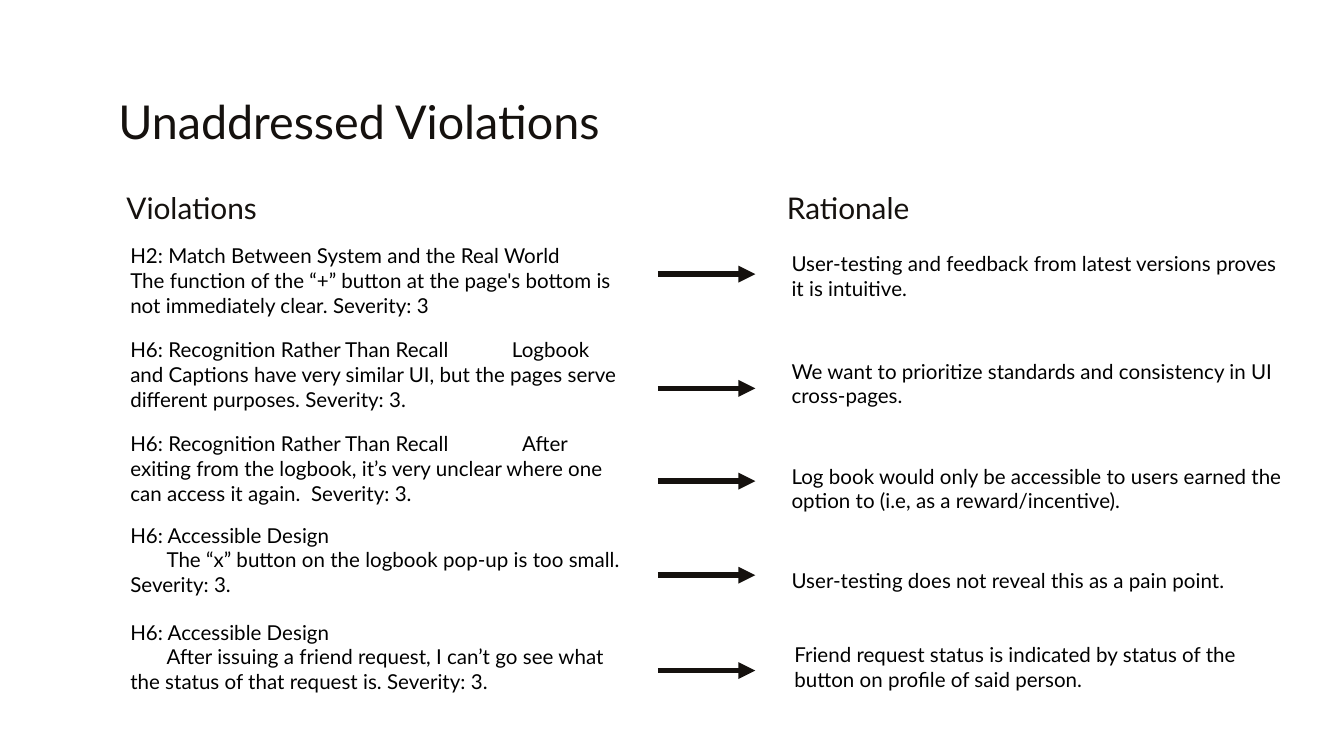
from dataclasses import dataclass

from lxml.etree import SubElement as Sub
from pptx import Presentation
from pptx.dml.color import RGBColor
from pptx.enum.shapes import MSO_CONNECTOR as Link
from pptx.enum.text import MSO_ANCHOR as Anchor, MSO_AUTO_SIZE as Fit, PP_ALIGN as Align
from pptx.oxml.ns import qn
from pptx.util import Emu, Pt

SCALE = 4572
FONT = "Lato"
DARK = "15110E"
BLACK = "000000"
INSET = 20
INDENT = 72


@dataclass
class Box:
    left: int
    top: int
    width: int
    height: int


@dataclass
class Row:
    top: int
    issue: str
    stop: int
    mid: int
    reply: str
    place: Box


ROWS = [
    Row(342, "H2: Match Between System and the Real World\vThe function of the “+” button at the page's bottom is not immediately clear. Severity: 3",
        0, 408, "User-testing and feedback from latest versions proves it is intuitive.", Box(1106, 354, 834, 128)),
    Row(482, "H6: Recognition Rather Than Recall\tLogbook\vand Captions have very similar UI, but the pages serve different purposes. Severity: 3.",
        568, 578, "We want to prioritize standards and consistency in UI cross-pages.", Box(1106, 514, 834, 128)),
    Row(622, "H6: Recognition Rather Than Recall\tAfter exiting from the logbook, it’s very unclear where one can access it again.  Severity: 3.",
        583, 716, "Log book would only be accessible to users earned the option to (i.e, as a reward/incentive).", Box(1106, 670, 834, 128)),
    Row(758, "H6: Accessible Design\v\tThe “x” button on the logbook pop-up is too small. Severity: 3.",
        54, 856, "User-testing does not reveal this as a pain point.", Box(1106, 826, 864, 128)),
    Row(902, "H6: Accessible Design\v\tAfter issuing a friend request, I can’t go see what the status of that request is. Severity: 3.",
        54, 998, "Friend request status is indicated by status of the button on profile of said person.", Box(1110, 936, 824, 128)),
]


def px(size: int) -> Emu:
    return Emu(size * SCALE)


def tint(code: str) -> RGBColor:
    return RGBColor.from_string(code)


def write(shape, box: Box, text: str, size: int, color: str, inset: int = INSET, stop: int = 0) -> None:
    shape.left, shape.top = px(box.left), px(box.top)
    shape.width, shape.height = px(box.width), px(box.height)
    frame = shape.text_frame
    frame.text = text
    frame.word_wrap = True
    frame.auto_size = Fit.NONE
    frame.vertical_anchor = Anchor.TOP
    frame.margin_left = px(inset)
    frame.margin_top = frame.margin_right = frame.margin_bottom = px(INSET)
    para = frame.paragraphs[0]
    para.alignment = Align.LEFT
    para.space_before = Pt(0)
    if stop:
        tabs = Sub(para._p.get_or_add_pPr(), qn("a:tabLst"))
        Sub(tabs, qn("a:tab"), pos=str(px(stop)), algn="l")
    for run in para.runs:
        run.font.name = FONT
        run.font.size = Pt(size)
        run.font.bold = False
        run.font.color.rgb = tint(color)


def note(slide, box: Box, text: str, stop: int = 0) -> None:
    shape = slide.shapes.add_textbox(0, 0, 0, 0)
    write(shape, box, text, 11, BLACK, INDENT, stop)


def arrow(slide, mid: int) -> None:
    line = slide.shapes.add_connector(Link.STRAIGHT, px(979), px(mid), px(1124), px(mid))
    line.line.color.rgb = tint(DARK)
    line.line.width = Pt(3)
    Sub(line.line._get_or_add_ln(), qn("a:tailEnd"), type="triangle")
    Sub(line._element.spPr, qn("a:effectLst"))


def main() -> None:
    deck = Presentation()
    deck.slide_width, deck.slide_height = px(2000), px(1125)
    slide = deck.slides.add_slide(deck.slide_layouts[4])
    title, left, spare, right, extra = slide.placeholders
    for item in (spare, extra):
        item._element.getparent().remove(item._element)
    write(title, Box(156, 118, 1688, 120), "Unaddressed Violations", 25, DARK)
    write(left, Box(168, 262, 260, 120), "Violations", 16, DARK)
    write(right, Box(1151, 262, 260, 120), "Rationale", 16, DARK)
    for row in ROWS:
        note(slide, Box(122, row.top, 834, 194), row.issue, row.stop)
        arrow(slide, row.mid)
        note(slide, row.place, row.reply)
    deck.save("out.pptx")


if __name__ == "__main__":
    main()
